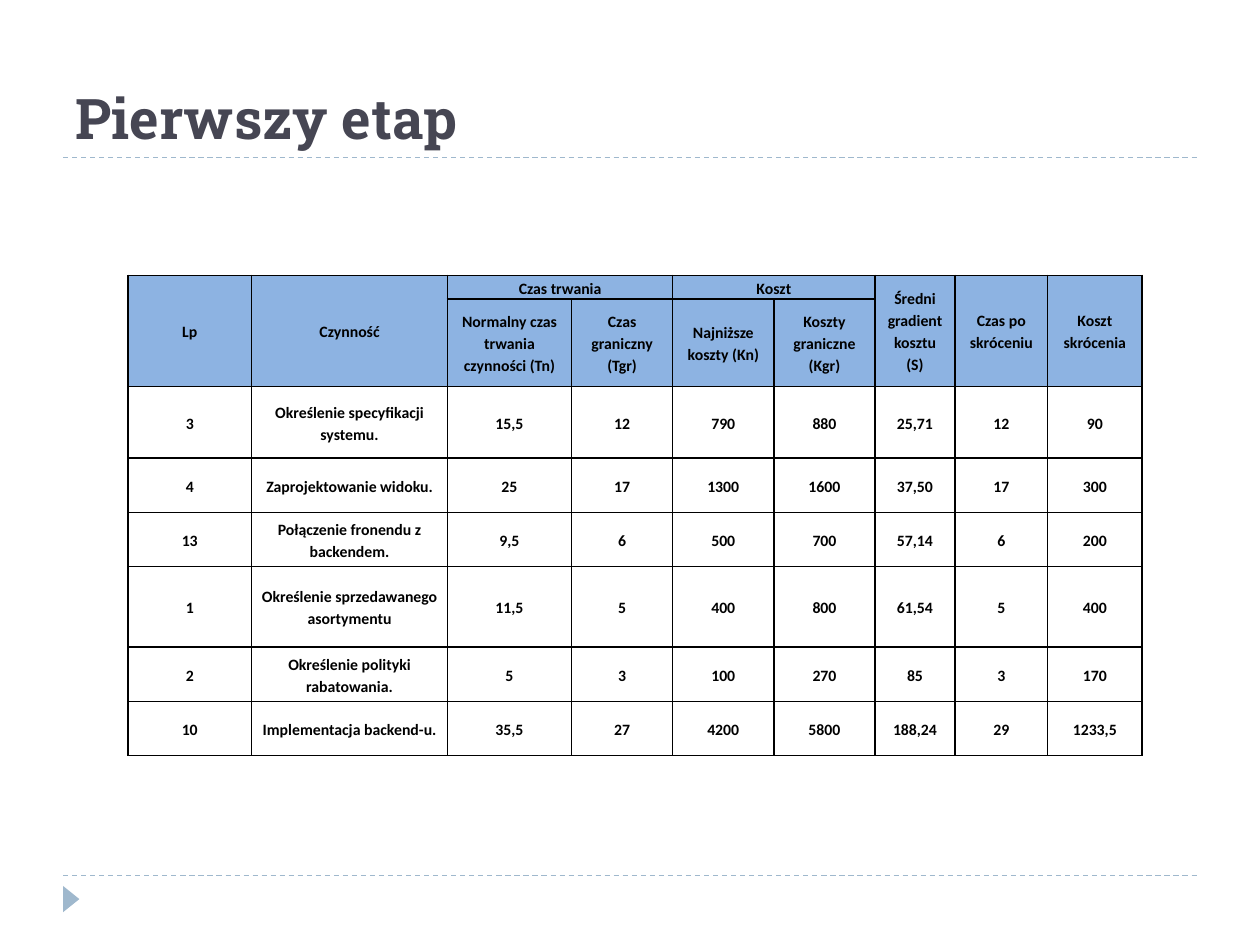
from dataclasses import dataclass

from lxml.etree import SubElement
from pptx import Presentation
from pptx.dml.color import RGBColor
from pptx.enum.dml import MSO_LINE
from pptx.enum.shapes import MSO_CONNECTOR, MSO_SHAPE
from pptx.enum.text import MSO_ANCHOR, PP_ALIGN
from pptx.oxml.ns import qn
from pptx.util import Cm, Pt


@dataclass(frozen=True)
class Theme:
    """Colours, fonts and type sizes of the slide."""
    title_color: str = "464653"
    accent: str = "9FB8CD"
    header_fill: str = "8DB3E2"
    ink: str = "000000"
    title_font: str = "Roboto Slab"
    table_font: str = "Calibri"
    title_size: int = 32
    table_size: int = 9


THEME = Theme()
COL_WIDTHS = (2.49, 3.95, 2.5, 2.04, 2.04, 2.04, 1.61, 1.87, 1.9)
ROW_HEIGHTS = (0.48, 1.63, 1.45, 1.09, 1.09, 1.63, 1.09, 1.09)
HEADER_ROWS = 2
MERGES = (
    [((0, col), (1, col)) for col in (0, 1, 6, 7, 8)]
    + [((0, col), (0, col + 1)) for col in (2, 4)]
)
ROWS = (
    ("Lp", "Czynność", "Czas trwania", "", "Koszt", "",
     "Średni gradient kosztu (S)", "Czas po skróceniu", "Koszt skrócenia"),
    ("", "", "Normalny czas trwania czynności (Tn)", "Czas graniczny (Tgr)",
     "Najniższe koszty (Kn)", "Koszty graniczne (Kgr)", "", "", ""),
    ("3", "Określenie specyfikacji systemu.", "15,5", "12", "790", "880", "25,71", "12", "90"),
    ("4", "Zaprojektowanie widoku.", "25", "17", "1300", "1600", "37,50", "17", "300"),
    ("13", "Połączenie fronendu z backendem.", "9,5", "6", "500", "700", "57,14", "6", "200"),
    ("1", "Określenie sprzedawanego asortymentu", "11,5", "5", "400", "800", "61,54", "5", "400"),
    ("2", "Określenie polityki rabatowania.", "5", "3", "100", "270", "85", "3", "170"),
    ("10", "Implementacja backend-u.", "35,5", "27", "4200", "5800", "188,24", "29", "1233,5"),
)


def write_text(tf, text, *, font, size, color, align=PP_ALIGN.LEFT, spacing=1.0):
    """Write one bold paragraph into a text frame."""
    tf.word_wrap = True
    p = tf.paragraphs[0]
    p.alignment = align
    p.line_spacing = spacing
    r = p.add_run()
    r.text = text
    r.font.name = font
    r.font.size = Pt(size)
    r.font.bold = True
    r.font.color.rgb = RGBColor.from_string(color)


def add_title(s, text):
    """Add the bottom-anchored title box."""
    tf = s.shapes.add_textbox(Cm(1.27), Cm(0.43), Cm(22.86), Cm(2.74)).text_frame
    tf.vertical_anchor = MSO_ANCHOR.BOTTOM
    write_text(tf, text, font=THEME.title_font, size=THEME.title_size,
               color=THEME.title_color)


def add_rule(s, y):
    """Add a dashed line across the slide at height y in cm."""
    line = s.shapes.add_connector(MSO_CONNECTOR.STRAIGHT, Cm(1.27), Cm(y), Cm(24.13), Cm(y))
    line.line.color.rgb = RGBColor.from_string(THEME.accent)
    line.line.width = Pt(0.75)
    line.line.dash_style = MSO_LINE.DASH
    SubElement(line._element.spPr, qn("a:effectLst"))


def add_marker(s):
    """Add the small footer triangle pointing right."""
    sp = s.shapes.add_shape(MSO_SHAPE.ISOSCELES_TRIANGLE, Cm(1.17), Cm(17.96), Cm(0.53), Cm(0.33))
    sp.rotation = 90
    sp.shadow.inherit = False
    sp.fill.solid()
    sp.fill.fore_color.rgb = RGBColor.from_string(THEME.accent)
    sp.line.fill.background()


def add_borders(cell):
    """Draw a thin solid border on all four sides of a cell."""
    tc_pr = cell._tc.get_or_add_tcPr()
    for side in ("lnL", "lnR", "lnT", "lnB"):
        ln = SubElement(tc_pr, qn(f"a:{side}"), w=str(Pt(1)))
        fill = SubElement(ln, qn("a:solidFill"))
        SubElement(fill, qn("a:srgbClr"), val=THEME.ink)


def format_cell(cell, text, is_header):
    """Set the borders, fill, margins and text of a cell."""
    add_borders(cell)
    if is_header:
        cell.fill.solid()
        cell.fill.fore_color.rgb = RGBColor.from_string(THEME.header_fill)
    else:
        cell.fill.background()
    cell.margin_left = cell.margin_right = Cm(0.19)
    cell.margin_top = cell.margin_bottom = 0
    cell.vertical_anchor = MSO_ANCHOR.MIDDLE
    if text:
        write_text(cell.text_frame, text, font=THEME.table_font, size=THEME.table_size,
                   color=THEME.ink, align=PP_ALIGN.CENTER, spacing=1.15)


def add_cost_table(s):
    """Add the table of activity times and costs."""
    table = s.shapes.add_table(len(ROWS), len(COL_WIDTHS), Cm(2.58), Cm(5.55),
                               Cm(sum(COL_WIDTHS)), Cm(sum(ROW_HEIGHTS))).table
    table.first_row = table.horz_banding = False
    for col, width in zip(table.columns, COL_WIDTHS):
        col.width = Cm(width)
    for row, height in zip(table.rows, ROW_HEIGHTS):
        row.height = Cm(height)
    for start, end in MERGES:
        table.cell(*start).merge(table.cell(*end))
    for i, texts in enumerate(ROWS):
        for j, text in enumerate(texts):
            format_cell(table.cell(i, j), text, i < HEADER_ROWS)


def main():
    """Build the slide and save it."""
    prs = Presentation()
    prs.slide_width, prs.slide_height = Cm(25.4), Cm(19.05)
    s = prs.slides.add_slide(prs.slide_layouts[6])
    for y in (17.65, 3.17):
        add_rule(s, y)
    add_marker(s)
    add_title(s, "Pierwszy etap")
    add_cost_table(s)
    prs.save("out.pptx")


if __name__ == "__main__":
    main()
